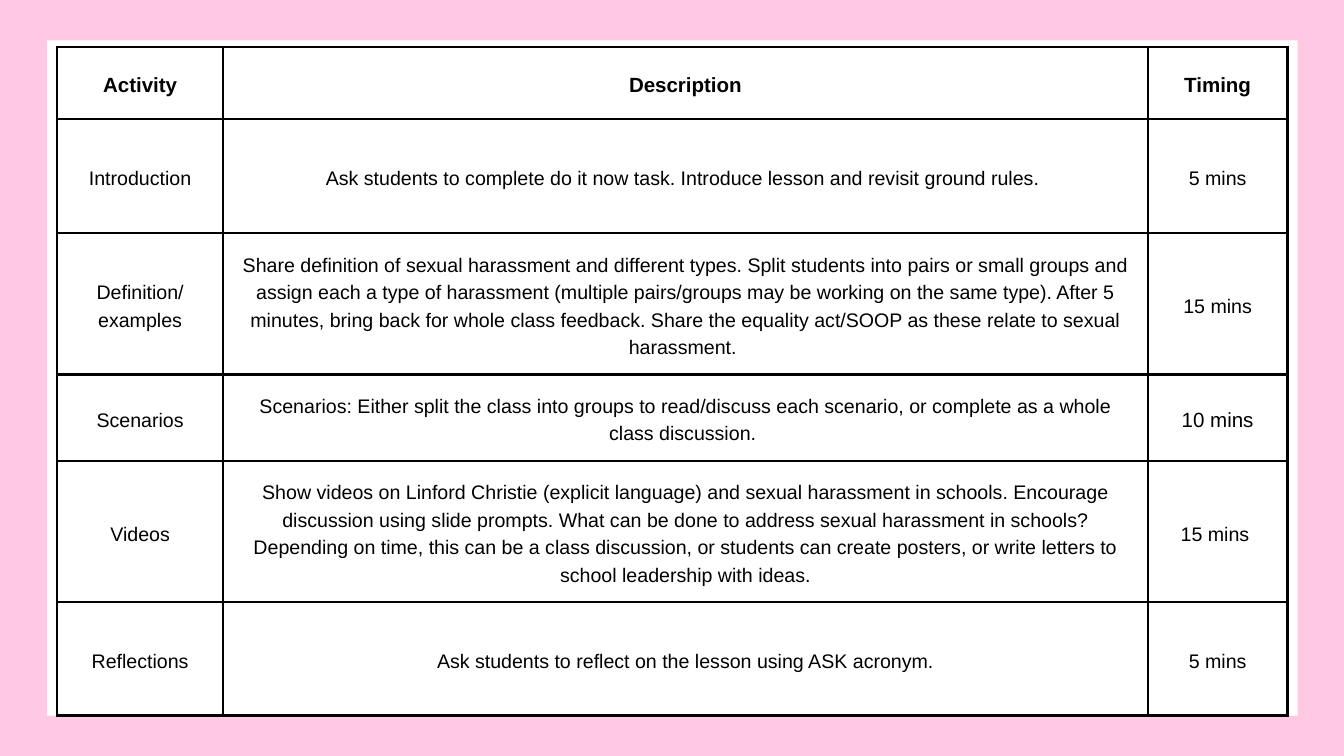
from lxml.etree import SubElement
from pptx import Presentation
from pptx.dml.color import RGBColor
from pptx.enum.shapes import MSO_SHAPE
from pptx.enum.text import MSO_ANCHOR, PP_ALIGN
from pptx.oxml.ns import qn
from pptx.util import Inches, Pt

# Content: lesson plan rows
HEADER = ("Activity", "Description", "Timing")
ACTIVITIES = [
    ("Introduction",
     "Ask students to complete do it now task. Introduce lesson and revisit "
     "ground rules. ",
     "5 mins"),
    ("Definition/\nexamples",
     "Share definition of sexual harassment and different types. Split students "
     "into pairs or small groups and assign each a type of harassment (multiple "
     "pairs/groups may be working on the same type). After 5 minutes, bring back "
     "for whole class feedback. Share the equality act/SOOP as these relate to "
     "sexual harassment. ",
     "15 mins"),
    ("Scenarios",
     "Scenarios: Either split the class into groups to read/discuss each "
     "scenario, or complete as a whole class discussion. ",
     "10 mins"),
    ("Videos",
     "Show videos on Linford Christie (explicit language) and sexual harassment "
     "in schools. Encourage discussion using slide prompts. What can be done to "
     "address sexual harassment in schools? Depending on time, this can be a "
     "class discussion, or students can create posters, or write letters to "
     "school leadership with ideas.",
     "15 mins "),
    ("Reflections",
     "Ask students to reflect on the lesson using ASK acronym.",
     "5 mins"),
]
LARGE = {"10 mins"}  # body text set at header size

# Layout in inches, type in points
SLIDE_W, SLIDE_H = 20, 11.25
PANEL = (0.7, 0.6, 18.61, 10.05)
TABLE_LEFT, TABLE_TOP = 0.85, 0.7
COLS = (2.47, 13.76, 2.08)
ROWS = (1.07, 1.7, 2.1, 1.29, 2.1, 1.69)
INSET = 0.21
HEAD_SIZE, BODY_SIZE, LEADING = 22, 21, 1.4
BORDER = 3
PINK, WHITE, BLACK = "FFC9E4", "FFFFFF", "000000"


def paint(fill, color):
    fill.solid()
    fill.fore_color.rgb = RGBColor.from_string(color)


def write(tf, text, size=BODY_SIZE, bold=False, color=BLACK, font="Arial"):
    for i, line in enumerate(text.split("\n")):
        p = tf.add_paragraph() if i else tf.paragraphs[0]
        p.alignment = PP_ALIGN.CENTER
        p.line_spacing = Pt(size * LEADING)
        r = p.add_run()
        r.text = line
        r.font.name, r.font.size, r.font.bold = font, Pt(size), bold
        r.font.color.rgb = RGBColor.from_string(color)


def add_borders(cell, color=BLACK, width=BORDER):
    tc_pr = cell._tc.get_or_add_tcPr()
    for i, side in enumerate(("lnL", "lnR", "lnT", "lnB")):
        ln = SubElement(tc_pr, qn(f"a:{side}"), w=str(Pt(width)))
        fill = SubElement(ln, qn("a:solidFill"))
        SubElement(fill, qn("a:srgbClr"), val=color)
        tc_pr.insert(i, ln)  # lines come before the cell fill


def main():
    prs = Presentation()
    prs.slide_width, prs.slide_height = Inches(SLIDE_W), Inches(SLIDE_H)
    s = prs.slides.add_slide(prs.slide_layouts[6])
    paint(s.background.fill, PINK)

    # White panel
    panel = s.shapes.add_shape(MSO_SHAPE.RECTANGLE, *map(Inches, PANEL))
    panel.shadow.inherit = False
    paint(panel.fill, WHITE)
    panel.line.fill.background()

    # Lesson plan table
    box = (TABLE_LEFT, TABLE_TOP, sum(COLS), sum(ROWS))
    table = s.shapes.add_table(len(ROWS), len(COLS), *map(Inches, box)).table
    table.horz_banding = False
    for col, width in zip(table.columns, COLS):
        col.width = Inches(width)
    for row, height in zip(table.rows, ROWS):
        row.height = Inches(height)

    for i, texts in enumerate([HEADER, *ACTIVITIES]):
        for j, text in enumerate(texts):
            cell = table.cell(i, j)
            cell.margin_left = cell.margin_right = Inches(INSET)
            cell.margin_top = cell.margin_bottom = Inches(INSET)
            cell.vertical_anchor = MSO_ANCHOR.MIDDLE
            paint(cell.fill, WHITE)
            add_borders(cell)
            size = HEAD_SIZE if i == 0 or text in LARGE else BODY_SIZE
            write(cell.text_frame, text, size=size, bold=i == 0)

    prs.save("out.pptx")


if __name__ == "__main__":
    main()
